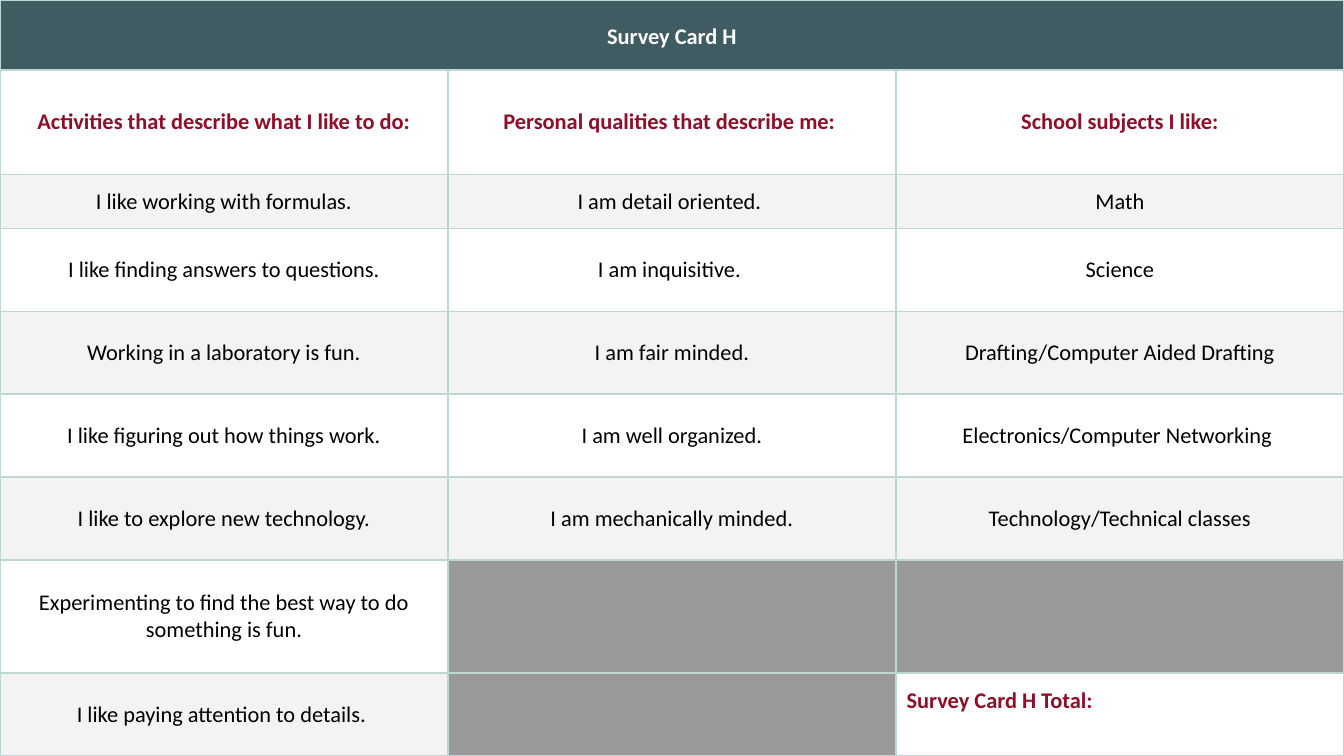
from lxml.etree import SubElement
from pptx import Presentation
from pptx.dml.color import RGBColor
from pptx.enum.text import MSO_ANCHOR, PP_ALIGN
from pptx.oxml.ns import qn
from pptx.util import Inches, Pt

TEAL = RGBColor(0x3E, 0x5C, 0x61)
CRIMSON = RGBColor(0x91, 0x0D, 0x28)
MINT = RGBColor(0xBE, 0xD7, 0xD3)
LIGHT_GRAY = RGBColor(0xF3, 0xF3, 0xF3)
MID_GRAY = RGBColor(0x99, 0x99, 0x99)
WHITE = RGBColor(0xFF, 0xFF, 0xFF)
BLACK = RGBColor(0, 0, 0)

SLIDE_WIDTH = 10
SLIDE_HEIGHT = SLIDE_WIDTH * 9 / 16
TITLE_HEIGHT, HEADING_HEIGHT, FIRST_HEIGHT, TALL_HEIGHT = 0.52, 0.78, 0.4, 0.84
MARGIN = 0.08
TITLE = "Survey Card H"
HEADINGS = [
    "Activities that describe what I like to do:",
    "Personal qualities that describe me: ",
    "School subjects I like:",
]
ANSWERS = [
    ("I like working with formulas.", "I am detail oriented. ", "Math"),
    ("I like finding answers to questions.", "I am inquisitive. ", "Science"),
    ("Working in a laboratory is fun.", "I am fair minded.",
     "Drafting/Computer Aided Drafting"),
    ("I like figuring out how things work.", "I am well organized.",
     "Electronics/Computer Networking "),
    ("I like to explore new technology.", "I am mechanically minded.",
     "Technology/Technical classes"),
    ("Experimenting to find the best way to do something is fun.", None, None),
    ("I like paying attention to details. ", None, None),
]


def write_text(cell, text, color=BLACK, bold=False, align=PP_ALIGN.CENTER):
    """Write one formatted paragraph in a cell and return it."""
    paragraph = cell.text_frame.paragraphs[0]
    paragraph.alignment = align
    run = paragraph.add_run()
    run.text = text
    run.font.name = "Calibri"
    run.font.size = Pt(12)
    run.font.bold = bold
    run.font.color.rgb = color
    return paragraph


def style_cell(cell, fill):
    """Give a cell its margins, borders and fill."""
    cell.vertical_anchor = MSO_ANCHOR.MIDDLE
    cell.margin_left = cell.margin_right = Inches(MARGIN)
    cell.margin_top = cell.margin_bottom = Inches(MARGIN)
    properties = cell._tc.get_or_add_tcPr()
    for side in ("a:lnL", "a:lnR", "a:lnT", "a:lnB"):
        line = SubElement(properties, qn(side), w=str(Pt(1)))
        solid = SubElement(line, qn("a:solidFill"))
        SubElement(solid, qn("a:srgbClr"), val=str(MINT))
    cell.fill.solid()
    cell.fill.fore_color.rgb = fill


def row_heights(total):
    """Share the height left by the special rows among the other rows."""
    special = TITLE_HEIGHT + HEADING_HEIGHT + FIRST_HEIGHT + TALL_HEIGHT
    regular = (total - special) / (len(ANSWERS) - 2)
    return [TITLE_HEIGHT, HEADING_HEIGHT, FIRST_HEIGHT,
            *[regular] * (len(ANSWERS) - 3), TALL_HEIGHT, regular]


def add_survey_card(slide, left, top, width, height):
    """Place the survey table in the given box."""
    columns = len(HEADINGS)
    heights = row_heights(height)
    frame = slide.shapes.add_table(
        len(heights), columns, Inches(left), Inches(top),
        Inches(width), Inches(height))
    table = frame.table
    table.first_row = table.horz_banding = False
    for column in table.columns:
        column.width = Inches(width / columns)
    for row, row_height in zip(table.rows, heights):
        row.height = Inches(row_height)

    for cell in table.rows[0].cells:
        style_cell(cell, TEAL)
    title_cell = table.cell(0, 0)
    title_cell.merge(table.cell(0, columns - 1))
    title = write_text(title_cell, TITLE, color=WHITE, bold=True)
    title.line_spacing = 1.15
    title.space_after = Pt(6)

    for cell, heading in zip(table.rows[1].cells, HEADINGS):
        style_cell(cell, WHITE)
        paragraph = write_text(cell, heading, color=CRIMSON, bold=True)
        paragraph.space_before = Pt(10)

    for index, answers in enumerate(ANSWERS):
        band = WHITE if index % 2 else LIGHT_GRAY
        for cell, answer in zip(table.rows[index + 2].cells, answers):
            style_cell(cell, band if answer else MID_GRAY)
            if answer:
                write_text(cell, answer)

    total_cell = table.cell(len(heights) - 1, columns - 1)
    total_cell.fill.fore_color.rgb = WHITE
    total_cell.margin_bottom = Inches(MARGIN + 0.2)
    write_text(total_cell, f"{TITLE} Total:", color=CRIMSON, bold=True,
               align=PP_ALIGN.LEFT)


def main():
    """Build and save the presentation."""
    presentation = Presentation()
    presentation.slide_width = Inches(SLIDE_WIDTH)
    presentation.slide_height = Inches(SLIDE_HEIGHT)
    slide = presentation.slides.add_slide(presentation.slide_layouts[6])
    add_survey_card(slide, 0, 0, SLIDE_WIDTH, SLIDE_HEIGHT)
    presentation.save("out.pptx")


if __name__ == "__main__":
    main()
